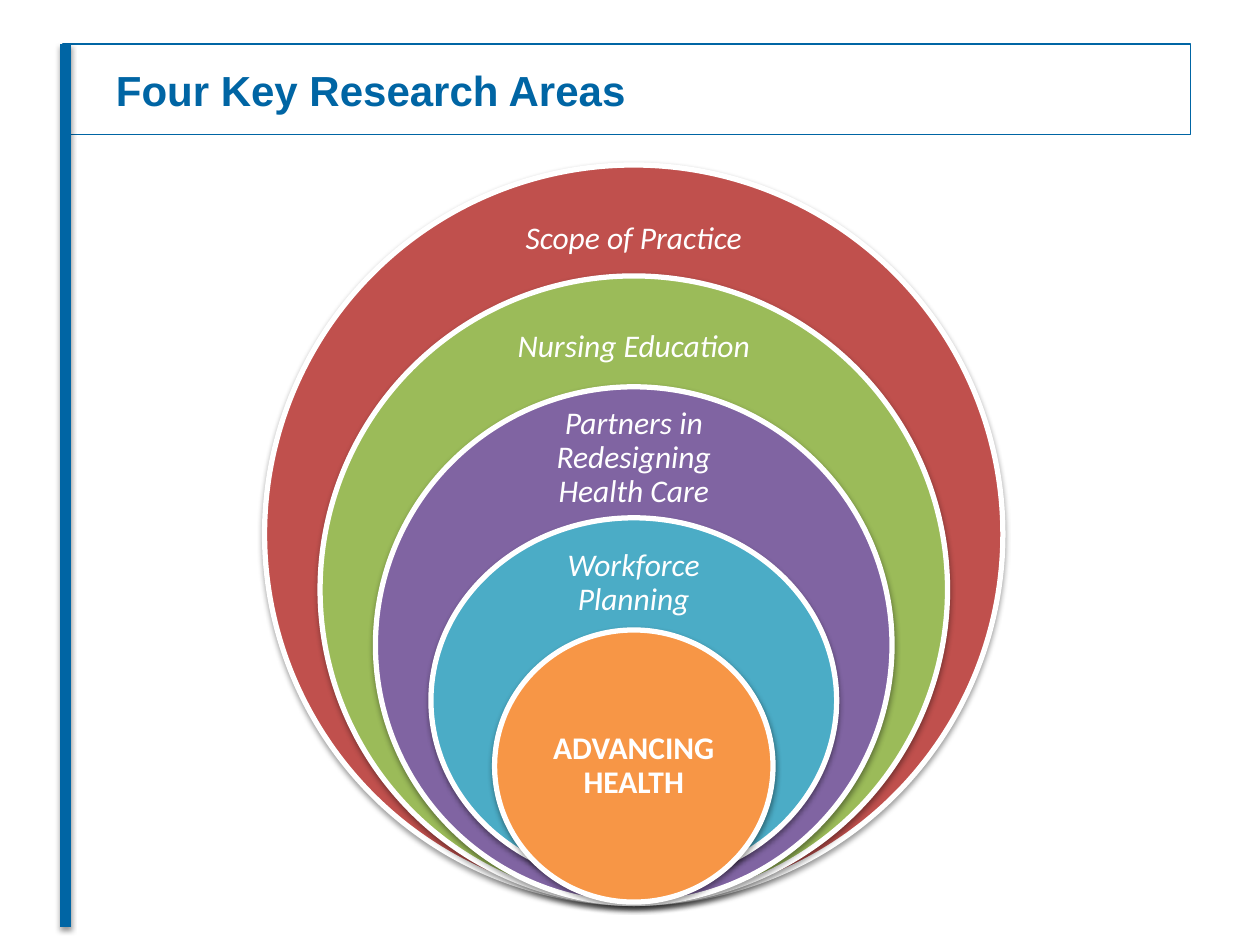
from pptx import Presentation
from pptx.dml.color import RGBColor
from pptx.enum.shapes import MSO_CONNECTOR, MSO_SHAPE
from pptx.enum.text import MSO_ANCHOR, PP_ALIGN
from pptx.oxml import parse_xml
from pptx.util import Inches, Pt

RECT, OVAL = MSO_SHAPE.RECTANGLE, MSO_SHAPE.OVAL
LINE = MSO_CONNECTOR.STRAIGHT
MID = MSO_ANCHOR.MIDDLE
LEFT, MIDDLE = PP_ALIGN.LEFT, PP_ALIGN.CENTER

COLS, ROWS = 100, 75
AXIS = 50.3
HUES = {
    "blue": "0065A4", "white": "FFFFFF", "red": "C0504D", "green": "9BBB59",
    "violet": "8064A2", "teal": "4BACC6", "orange": "F79646",
}
SHADE = (
    '<a:effectLst xmlns:a="http://schemas.openxmlformats.org/drawingml/2006/main">'
    '<a:outerShdw blurRad="39370" dist="20320" dir="5400000" rotWithShape="0">'
    '<a:srgbClr val="000000"><a:alpha val="38000"/></a:srgbClr>'
    '</a:outerShdw></a:effectLst>'
)
HEAD = {"name": "Arial", "size": Pt(24), "bold": True}
BODY = {"name": "Calibri", "size": Pt(18), "italic": True}
CORE = {"name": "Calibri", "size": Pt(18), "bold": True}

RINGS = [
    ("red", (13.1, 58.6, 58.6), (16, 22, 5.9), ["Scope of Practice"], BODY),
    ("green", (21.9, 49.8, 49.8), (24.7, 21.5, 5.7), ["Nursing Education"], BODY),
    ("violet", (30.7, 41, 41), (33.5, 21.2, 5.7),
     ["Partners in", "Redesigning Health Care"], BODY),
    ("teal", (41.1, 32.2, 29), (43.7, 17.4, 5.2), ["Workforce Planning"], BODY),
    ("orange", (50, 22.1, 21.6), (55.4, 15.6, 10.8), ["ADVANCING HEALTH"], CORE),
]


def put(item, vals):
    for key, val in vals.items():
        setattr(item, key, val)


class Deck:
    def __init__(self):
        self.show = Presentation()
        put(self.show, {"slide_width": Inches(10), "slide_height": Inches(7.5)})
        self.slide = self.show.slides.add_slide(self.show.slide_layouts[5])
        self.shapes = self.slide.shapes

    def grid(self, *nums):
        sides = (self.show.slide_width / COLS, self.show.slide_height / ROWS)
        return [round(num * sides[i % 2]) for i, num in enumerate(nums)]

    def hue(self, name):
        return RGBColor.from_string(HUES[name])

    def edge(self, item, name, width):
        item.line.color.rgb = self.hue(name)
        item.line.width = Pt(width)

    def shade(self, item):
        item._element.spPr.append(parse_xml(SHADE))

    def words(self, frame, lines, font, name, align, space):
        put(frame, {"word_wrap": True, "vertical_anchor": MID})
        for i, line in enumerate(lines):
            para = frame.paragraphs[0] if i == 0 else frame.add_paragraph()
            put(para, {"text": line, "alignment": align, "line_spacing": space})
            put(para.font, font)
            para.font.color.rgb = self.hue(name)

    def title(self, text, *box):
        item = self.shapes.title
        put(item, dict(zip(("left", "top", "width", "height"), self.grid(*box))))
        self.words(item.text_frame, [text], HEAD, "blue", LEFT, 1.0)

    def frame(self, *box):
        item = self.shapes.add_shape(RECT, *self.grid(*box))
        item.shadow.inherit = False
        item.fill.background()
        self.edge(item, "blue", 0.75)
        self.shapes._spTree.insert(2, item._element)

    def bar(self, *ends):
        item = self.shapes.add_connector(LINE, *self.grid(*ends))
        self.edge(item, "blue", 6)
        self.shade(item)

    def ring(self, name, top, width, height):
        item = self.shapes.add_shape(
            OVAL, *self.grid(AXIS - width / 2, top, width, height))
        item.fill.solid()
        item.fill.fore_color.rgb = self.hue(name)
        self.edge(item, "white", 3)
        self.shade(item)

    def label(self, lines, font, top, width, height):
        item = self.shapes.add_textbox(
            *self.grid(AXIS - width / 2, top, width, height))
        sides = ("left", "right", "top", "bottom")
        put(item.text_frame, {"margin_" + side: Inches(0.14) for side in sides})
        self.words(item.text_frame, lines, font, "white", MIDDLE, 0.9)


def main():
    deck = Deck()
    deck.frame(5, 3.5, 89.5, 7.2)
    deck.bar(5.2, 3.5, 5.2, 73.6)
    deck.title("Four Key Research Areas", 8.2, 3.5, 86.8, 7.2)
    for name, oval, box, lines, font in RINGS:
        deck.ring(name, *oval)
        deck.label(lines, font, *box)
    deck.show.save("out.pptx")


if __name__ == "__main__":
    main()
